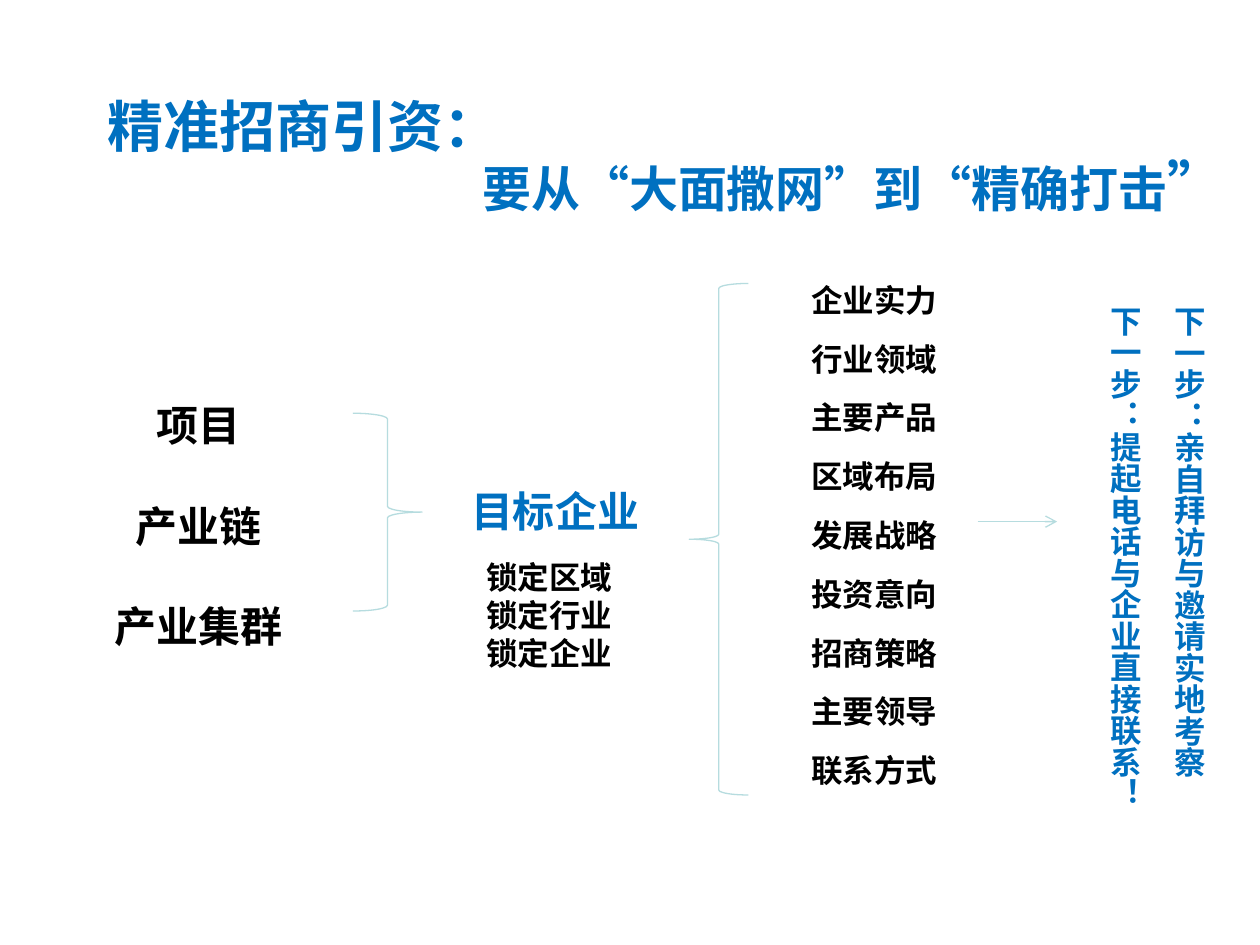
"""Build the slide on targeted investment promotion."""
from dataclasses import dataclass
from typing import Any

import pptx
import pptx.dml.color
import pptx.enum.shapes
import pptx.enum.text
import pptx.oxml
import pptx.oxml.ns
import pptx.util
from lxml import etree

Pt = pptx.util.Pt
RGB = pptx.dml.color.RGBColor
Align = pptx.enum.text.PP_ALIGN
Fit = pptx.enum.text.MSO_AUTO_SIZE
Kind = pptx.enum.shapes.MSO_SHAPE
qn = pptx.oxml.ns.qn


@dataclass(frozen=True)
class Theme:
    font: str = "Noto Sans CJK SC"
    blue: RGB = RGB(0x00, 0x70, 0xC0)
    black: RGB = RGB(0, 0, 0)
    pale: RGB = RGB(0xB6, 0xDC, 0xDF)
    title: float = 32
    sub: float = 28
    head: float = 24
    body: float = 18
    line: float = 0.75


@dataclass(frozen=True)
class Box:
    left: float
    top: float
    width: float
    height: float


@dataclass(frozen=True)
class Block:
    box: Box
    lines: tuple[str, ...]
    size: float
    color: RGB
    align: Align = Align.CENTER
    first: float = 0
    gap: float = 0
    tall: bool = False


@dataclass(frozen=True)
class Brace:
    box: Box
    kind: Kind


THEME = Theme()

BLOCKS = (
    Block(Box(54, 224.64, 118.8, 181.44), ("项目", "产业链", "产业集群"),
          THEME.head, THEME.black, gap=28.8),
    Block(Box(257.76, 273.6, 118.8, 36.72), ("目标企业",),
          THEME.head, THEME.blue),
    Block(Box(456.48, 156.96, 147.6, 322.56),
          ("企业实力", "行业领域", "主要产品", "区域布局", "发展战略",
           "投资意向", "招商策略", "主要领导", "联系方式"),
          THEME.body, THEME.black, Align.LEFT, first=12, gap=12),
    Block(Box(620.64, 164.88, 36.72, 289.44),
          ("下一步：提起电话与企业直接联系！",),
          THEME.body, THEME.blue, tall=True),
    Block(Box(270.72, 315.36, 89.28, 72.72),
          ("锁定区域", "锁定行业", "锁定企业"),
          THEME.body, THEME.black, Align.LEFT),
    Block(Box(658.08, 167.76, 36, 289.44),
          ("下一步：亲自拜访与邀请实地考察",),
          THEME.body, THEME.blue, tall=True),
)

BRACES = (
    Brace(Box(201.6, 236.16, 39.6, 113.04), Kind.RIGHT_BRACE),
    Brace(Box(393.84, 162, 33.84, 292.32), Kind.LEFT_BRACE),
)


def place(box: Box) -> tuple[int, ...]:
    """Return the box as lengths."""
    return Pt(box.left), Pt(box.top), Pt(box.width), Pt(box.height)


def add_run(para: Any, text: str, size: float, color: RGB) -> None:
    """Add one bold run in the theme font."""
    run = para.add_run()
    run.text = text
    font = run.font
    font.name, font.size, font.bold = THEME.font, Pt(size), True
    font.color.rgb = color
    latin = run.font._element.find(qn("a:latin"))
    east = pptx.oxml.parse_xml(
        f'<a:ea {pptx.oxml.ns.nsdecls("a")} typeface="{THEME.font}"/>')
    latin.addnext(east)


def add_title(slide: Any) -> None:
    """Fill the title with its two lines."""
    title = slide.shapes.title
    title.left, title.top, title.width, title.height = place(
        Box(54, 65.52, 652.32, 51.12))
    frame = title.text_frame
    frame.auto_size = Fit.NONE
    frame.vertical_anchor = pptx.enum.text.MSO_ANCHOR.MIDDLE
    lines = (
        (Align.LEFT, (("精准招商引资：", THEME.title),)),
        (Align.RIGHT, (("要从“大面撒网”到“精确打击", THEME.sub),
                       ("”", THEME.title))),
    )
    for index, (align, runs) in enumerate(lines):
        para = frame.add_paragraph() if index else frame.paragraphs[0]
        para.alignment, para.line_spacing = align, 0.9
        for text, size in runs:
            add_run(para, text, size, THEME.blue)


def add_block(slide: Any, block: Block) -> None:
    """Add a text box with one paragraph for each line."""
    shape = slide.shapes.add_textbox(*place(block.box))
    frame = shape.text_frame
    frame.word_wrap = True
    frame.auto_size = Fit.SHAPE_TO_FIT_TEXT
    if block.tall:
        next(shape.element.iter(qn("a:bodyPr"))).set("vert", "eaVert")
    for index, text in enumerate(block.lines):
        para = frame.add_paragraph() if index else frame.paragraphs[0]
        para.alignment = block.align
        para.space_before = Pt(block.gap if index else block.first)
        add_run(para, text, block.size, block.color)


def set_line(shape: Any) -> None:
    """Give the shape the pale thin line."""
    shape.line.color.rgb = THEME.pale
    shape.line.width = Pt(THEME.line)


def add_brace(slide: Any, brace: Brace) -> None:
    """Add an open brace."""
    shape = slide.shapes.add_shape(brace.kind, *place(brace.box))
    shape.shadow.inherit = False
    shape.fill.background()
    set_line(shape)


def add_arrow(slide: Any, start: float, end: float, top: float) -> None:
    """Add a level arrow from start to end."""
    arrow = slide.shapes.add_connector(
        pptx.enum.shapes.MSO_CONNECTOR.STRAIGHT,
        Pt(start), Pt(top), Pt(end), Pt(top))
    set_line(arrow)
    props = arrow.element.find(qn("p:spPr"))
    etree.SubElement(props.find(qn("a:ln")), qn("a:tailEnd"), type="arrow")
    etree.SubElement(props, qn("a:effectLst"))


def main() -> None:
    """Build and save the slide."""
    deck = pptx.Presentation()
    deck.slide_width, deck.slide_height = Pt(720), Pt(540)
    slide = deck.slides.add_slide(deck.slide_layouts[5])
    add_title(slide)
    for block in BLOCKS:
        add_block(slide, block)
    for brace in BRACES:
        add_brace(slide, brace)
    add_arrow(slide, 558.72, 604.08, 298.08)
    deck.save("out.pptx")


if __name__ == "__main__":
    main()
